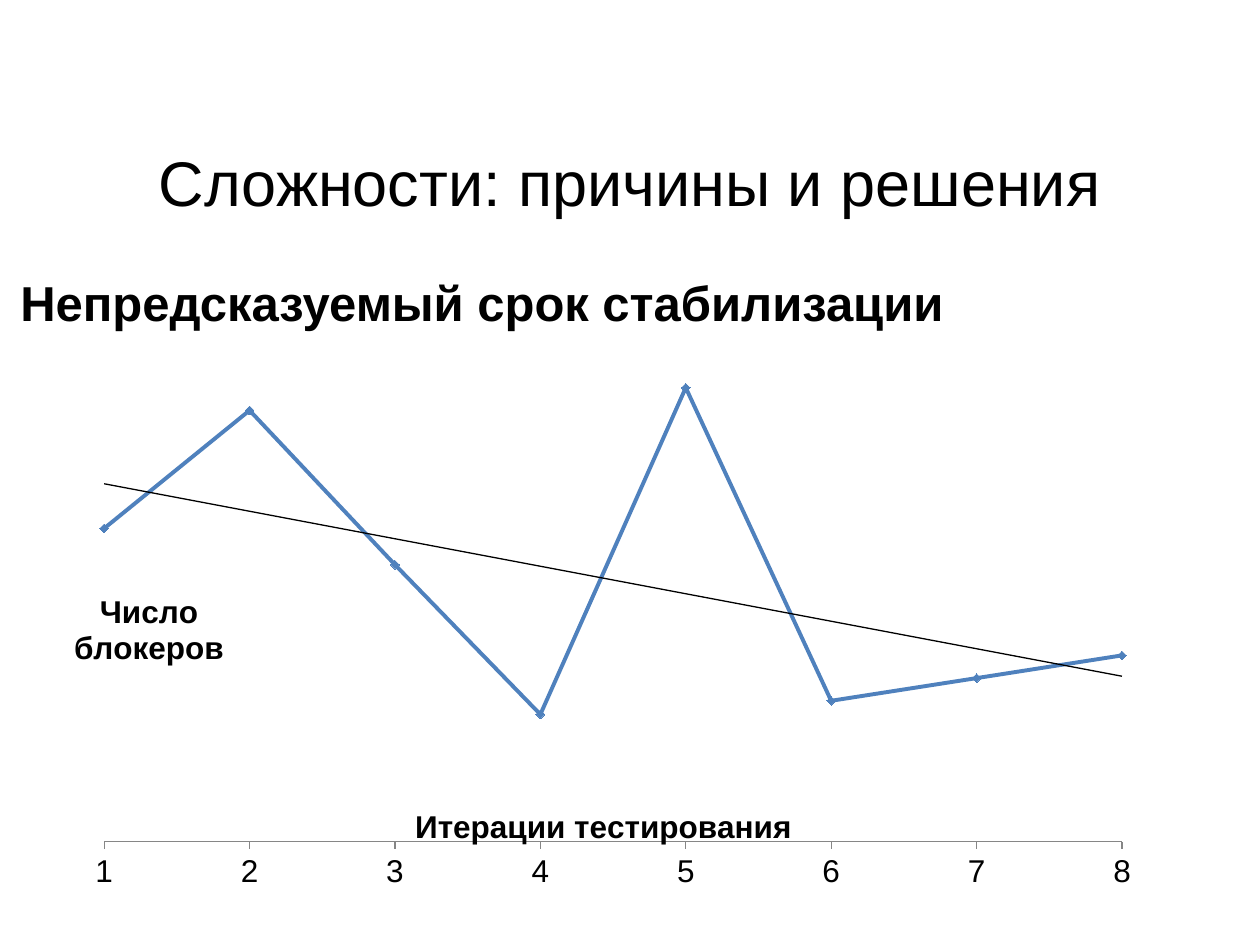
from lxml import etree
from pptx import Presentation
from pptx.chart.data import XyChartData
from pptx.dml.color import RGBColor
from pptx.enum.chart import XL_CHART_TYPE, XL_MARKER_STYLE, XL_TICK_LABEL_POSITION, XL_TICK_MARK
from pptx.enum.text import MSO_ANCHOR, PP_ALIGN
from pptx.oxml import parse_xml
from pptx.oxml.ns import qn
from pptx.util import Pt

SMOOTH = XL_CHART_TYPE.XY_SCATTER_SMOOTH
DIAMOND = XL_MARKER_STYLE.DIAMOND
NO_LABELS = XL_TICK_LABEL_POSITION.NONE
OUTSIDE, NO_TICK = XL_TICK_MARK.OUTSIDE, XL_TICK_MARK.NONE
MIDDLE, TOP = MSO_ANCHOR.MIDDLE, MSO_ANCHOR.TOP
CENTER, LEFT = PP_ALIGN.CENTER, PP_ALIGN.LEFT

PX = 914400 / 126
THEME = {
    "font": "Arial",
    "text": RGBColor(0, 0, 0),
    "curve": RGBColor(0x4F, 0x81, 0xBD),
    "axis": RGBColor(0x86, 0x86, 0x86),
    "title": Pt(36),
    "heading": Pt(28),
    "axis_text": Pt(18),
    "chart_text": Pt(10),
}


def add_text(s, box, text, size, bold, align, anchor):
    tf = s.shapes.add_textbox(*[round(v * PX) for v in box]).text_frame
    tf.word_wrap = True
    tf.vertical_anchor = anchor
    p = tf.paragraphs[0]
    p.text = text
    p.alignment = align
    p.font.name, p.font.size, p.font.bold = THEME["font"], size, bold
    p.font.color.rgb = THEME["text"]
    return p


def set_layout(parent, index, **values):
    for old in parent.findall(qn("c:layout")):
        parent.remove(old)
    layout = etree.Element(qn("c:layout"))
    manual = etree.SubElement(layout, qn("c:manualLayout"))
    for tag, value in values.items():
        etree.SubElement(manual, qn("c:" + tag)).set("val", str(value))
    parent.insert(index, layout)


prs = Presentation()
prs.slide_width, prs.slide_height = round(1260 * PX), round(945 * PX)
s = prs.slides.add_slide(prs.slide_layouts[6])

add_text(s, (0, 137, 1260, 88), "Сложности: причины и решения",
         THEME["title"], False, CENTER, MIDDLE)
p = add_text(s, (8, 255, 1211, 655), "Непредсказуемый срок стабилизации",
             THEME["heading"], True, LEFT, TOP)
p.line_spacing = 1.2
p.space_after = Pt(6)

data = XyChartData()
blockers = data.add_series("Series 1")
for iteration, count in enumerate([69, 95, 61, 28, 100, 31, 36, 41], 1):
    blockers.add_data_point(iteration, count)

frame = s.shapes.add_chart(SMOOTH, *[round(v * PX) for v in (25, 344, 1131, 556)], data)
chart = frame.chart
chart.has_legend = False
chart.has_title = False
chart.font.name, chart.font.size = THEME["font"], THEME["chart_text"]
chart.font.color.rgb = THEME["text"]
set_layout(chart.plots[0]._element.getparent(), 0, layoutTarget="inner",
           xMode="edge", yMode="edge", x=0.07, y=0.046, w=0.9, h=0.849)

x_axis, y_axis = chart.category_axis, chart.value_axis
for axis, low, high, step, lines, x, y in [
    (x_axis, 1, 8, 1, ["Итерации тестирования"], 0.34, 0.82),
    (y_axis, 0, 104, 14, ["Число", "блокеров"], 0.04, 0.44),
]:
    axis.minimum_scale, axis.maximum_scale, axis.major_unit = low, high, step
    axis.has_major_gridlines = False
    axis.minor_tick_mark = NO_TICK
    title = axis.axis_title
    tf = title.text_frame
    tf.text = "\n".join(lines)
    for p in tf.paragraphs:
        p.font.name, p.font.size, p.font.bold = THEME["font"], THEME["axis_text"], True
        p.font.color.rgb = THEME["text"]
    body = tf._txBody.find(qn("a:bodyPr"))
    body.set("rot", "0")
    body.set("vert", "horz")
    set_layout(title._element, 1, xMode="edge", yMode="edge", x=x, y=y)

x_axis.major_tick_mark = OUTSIDE
x_axis.tick_labels.font.size = THEME["axis_text"]
x_axis.tick_labels.number_format = "General"
x_axis.tick_labels.number_format_is_linked = False
x_axis.format.line.color.rgb = THEME["axis"]
y_axis.major_tick_mark = NO_TICK
y_axis.tick_label_position = NO_LABELS
y_axis.format.line.fill.background()

curve = chart.plots[0].series[0]
curve.smooth = True
curve.format.line.color.rgb = THEME["curve"]
curve.format.line.width = Pt(2.25)
curve.marker.style, curve.marker.size = DIAMOND, 5
curve.marker.format.fill.solid()
curve.marker.format.fill.fore_color.rgb = THEME["curve"]
curve.marker.format.line.color.rgb = THEME["curve"]

trend = parse_xml(
    '<c:trendline xmlns:c="http://schemas.openxmlformats.org/drawingml/2006/chart" '
    'xmlns:a="http://schemas.openxmlformats.org/drawingml/2006/main">'
    f'<c:spPr><a:ln w="9525"><a:solidFill><a:srgbClr val="{THEME["text"]}"/></a:solidFill></a:ln></c:spPr>'
    '<c:trendlineType val="linear"/><c:dispRSqr val="0"/><c:dispEq val="0"/></c:trendline>'
)
curve._element.find(qn("c:xVal")).addprevious(trend)

prs.save("out.pptx")
